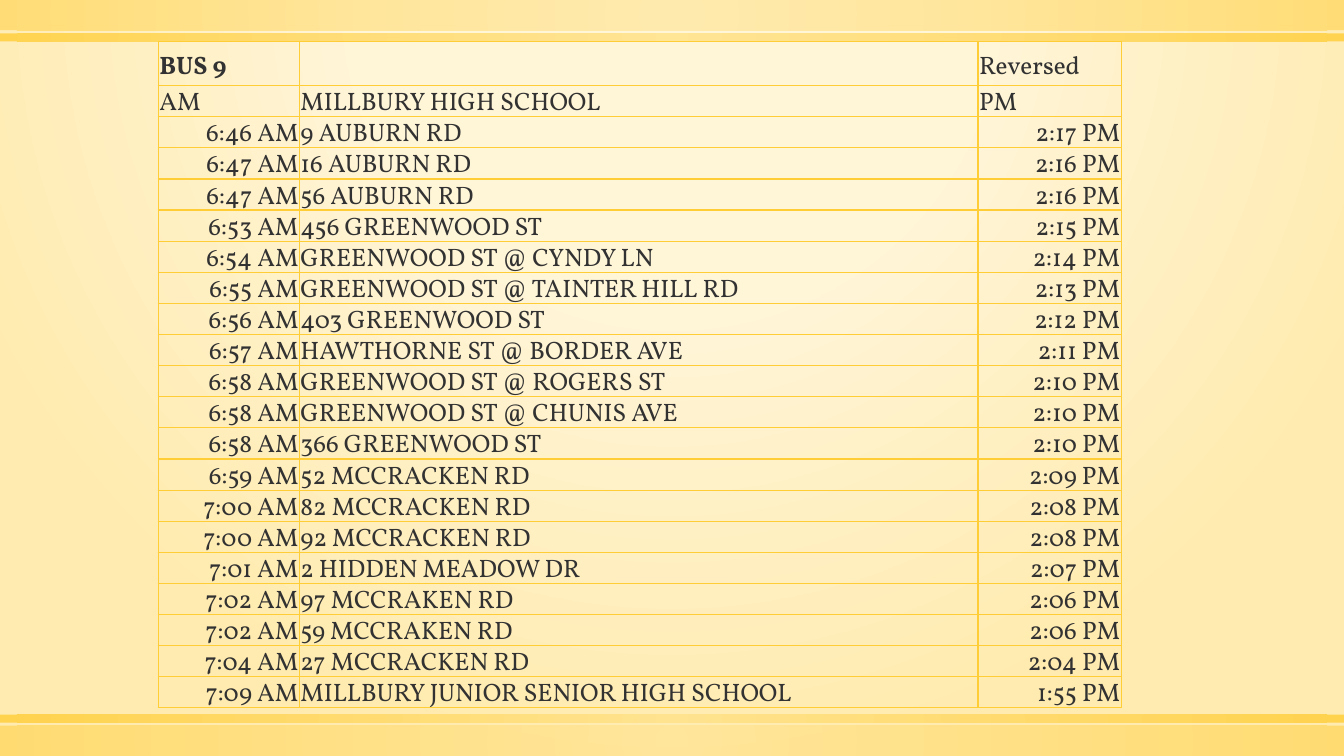
from typing import NamedTuple

from lxml.etree import SubElement
from pptx import Presentation
from pptx.dml.color import RGBColor as RGB
from pptx.enum.shapes import MSO_SHAPE as SHAPE
from pptx.enum.text import MSO_ANCHOR as ANCHOR, PP_ALIGN as ALIGN
from pptx.oxml.ns import qn
from pptx.util import Inches, Pt

COLORS = {
    "cream": "FFF5D7",
    "pale": "FFEBAF",
    "light": "FFE186",
    "gold": "FFCD36",
    "text": "323232",
}
TITLE_FORMAT = {
    "margin_left": Inches(0.01),
    "margin_right": Inches(0.01),
    "margin_top": Inches(0.01),
    "margin_bottom": 0,
    "vertical_anchor": ANCHOR.BOTTOM,
}
TIGHT_FORMAT = TITLE_FORMAT | {"margin_bottom": Inches(-0.05)}
FONT_FORMAT = {"name": "Vollkorn", "size": Pt(18), "bold": False}
PLAIN_TABLE = {"first_row": False, "horz_banding": False}

SLIDE_W, SLIDE_H = 13.33, 7.5
TABLE_LEFT, TABLE_TOP = 1.57, 0.41
COLUMN_WIDTHS = (1.4, 6.73, 1.42)
TITLE_ROW_H, STOPS_H = 0.44, 6.17


class Stop(NamedTuple):
    pos: int
    color: str
    opacity: int


class Band(NamedTuple):
    top: float
    height: float
    opacity: int


class Row(NamedTuple):
    am: str
    place: str
    pm: str


BACKDROP = (Stop(0, "cream", 59), Stop(40, "cream", 66), Stop(100, "pale", 100))
BANDS = (
    Band(7.2, 0.3, 50),
    Band(7.09, 0.08, 80),
    Band(0, 0.3, 50),
    Band(0.33, 0.08, 80),
)
HEADINGS = (
    Row("BUS 9", "", "Reversed"),
    Row("AM", "MILLBURY HIGH SCHOOL", "PM"),
)
BUS_STOPS = (
    Row("6:46", "9 AUBURN RD", "2:17"),
    Row("6:47", "16 AUBURN RD", "2:16"),
    Row("6:47", "56 AUBURN RD", "2:16"),
    Row("6:53", "456 GREENWOOD ST", "2:15"),
    Row("6:54", "GREENWOOD ST @ CYNDY LN", "2:14"),
    Row("6:55", "GREENWOOD ST @ TAINTER HILL RD", "2:13"),
    Row("6:56", "403 GREENWOOD ST", "2:12"),
    Row("6:57", "HAWTHORNE ST @ BORDER AVE", "2:11"),
    Row("6:58", "GREENWOOD ST @ ROGERS ST", "2:10"),
    Row("6:58", "GREENWOOD ST @ CHUNIS AVE", "2:10"),
    Row("6:58", "366 GREENWOOD ST", "2:10"),
    Row("6:59", "52 MCCRACKEN RD", "2:09"),
    Row("7:00", "82 MCCRACKEN RD", "2:08"),
    Row("7:00", "92 MCCRACKEN RD", "2:08"),
    Row("7:01", "2 HIDDEN MEADOW DR", "2:07"),
    Row("7:02", "97 MCCRAKEN RD", "2:06"),
    Row("7:02", "59 MCCRAKEN RD", "2:06"),
    Row("7:04", "27 MCCRACKEN RD", "2:04"),
    Row("7:09", "MILLBURY JUNIOR SENIOR HIGH SCHOOL", "1:55"),
)


def set_format(target, values: dict) -> None:
    for name, value in values.items():
        setattr(target, name, value)


def add_color(parent, color: str, opacity: int = 100) -> None:
    clr = SubElement(parent, qn("a:srgbClr"), val=COLORS[color])
    if opacity < 100:
        SubElement(clr, qn("a:alpha"), val=str(opacity * 1000))


def radial_fill(owner, fill, stops: tuple, top: int, bottom: int) -> None:
    fill.solid()
    solid = next(owner.iter(qn("a:solidFill")))
    grad = solid.makeelement(qn("a:gradFill"), {"rotWithShape": "1"})
    solid.getparent().replace(solid, grad)
    stop_list = SubElement(grad, qn("a:gsLst"))
    for stop in stops:
        gs = SubElement(stop_list, qn("a:gs"), pos=str(stop.pos * 1000))
        add_color(gs, stop.color, stop.opacity)
    circle = SubElement(grad, qn("a:path"), {"path": "circle"})
    sides = {"l": 50, "t": top, "r": 50, "b": bottom}
    SubElement(circle, qn("a:fillToRect"), {k: str(v * 1000) for k, v in sides.items()})


def add_band(s, band: Band) -> None:
    sp = s.shapes.add_shape(
        SHAPE.RECTANGLE, 0, Inches(band.top), Inches(SLIDE_W), Inches(band.height)
    )
    sp.shadow.inherit = False
    sp.line.fill.background()
    stops = (Stop(0, "light", band.opacity), Stop(100, "gold", band.opacity))
    radial_fill(sp.element, sp.fill, stops, 50, 50)


def add_borders(cell) -> None:
    tc_pr = cell._tc.get_or_add_tcPr()
    for i, side in enumerate("LRTB"):
        ln = tc_pr.makeelement(qn(f"a:ln{side}"), {"w": str(Pt(1))})
        add_color(SubElement(ln, qn("a:solidFill")), "gold")
        tc_pr.insert(i, ln)


def fill_cell(cell, text: str, cell_format: dict, align: ALIGN, bold: bool) -> None:
    set_format(cell, cell_format)
    cell.fill.background()
    add_borders(cell)
    p = cell.text_frame.paragraphs[0]
    p.alignment = align
    font = p.font
    if text:
        r = p.add_run()
        r.text = text
        font = r.font
    set_format(font, FONT_FORMAT | {"bold": bold})
    font.color.rgb = RGB.from_string(COLORS["text"])


def add_timetable(s) -> None:
    times = tuple(Row(f"{r.am} AM", r.place, f"{r.pm} PM") for r in BUS_STOPS)
    rows = HEADINGS + times
    row_h = STOPS_H / (len(rows) - 1)
    table = s.shapes.add_table(
        len(rows), len(COLUMN_WIDTHS), Inches(TABLE_LEFT), Inches(TABLE_TOP),
        Inches(sum(COLUMN_WIDTHS)), Inches(TITLE_ROW_H + STOPS_H),
    ).table
    set_format(table, PLAIN_TABLE)
    for column, width in zip(table.columns, COLUMN_WIDTHS):
        column.width = Inches(width)
    for i, row in enumerate(rows):
        table.rows[i].height = Inches(row_h if i else TITLE_ROW_H)
        cell_format = TIGHT_FORMAT if i else TITLE_FORMAT
        for j, text in enumerate(row):
            is_time = i >= len(HEADINGS) and j != 1
            align = ALIGN.RIGHT if is_time else ALIGN.LEFT
            fill_cell(table.cell(i, j), text, cell_format, align, i == j == 0)


def main() -> None:
    prs = Presentation()
    set_format(prs, {"slide_width": Inches(SLIDE_W), "slide_height": Inches(SLIDE_H)})
    s = prs.slides.add_slide(prs.slide_layouts[6])
    radial_fill(s.element, s.background.fill, BACKDROP, -80, 180)
    for band in BANDS:
        add_band(s, band)
    add_timetable(s)
    prs.save("out.pptx")


if __name__ == "__main__":
    main()
